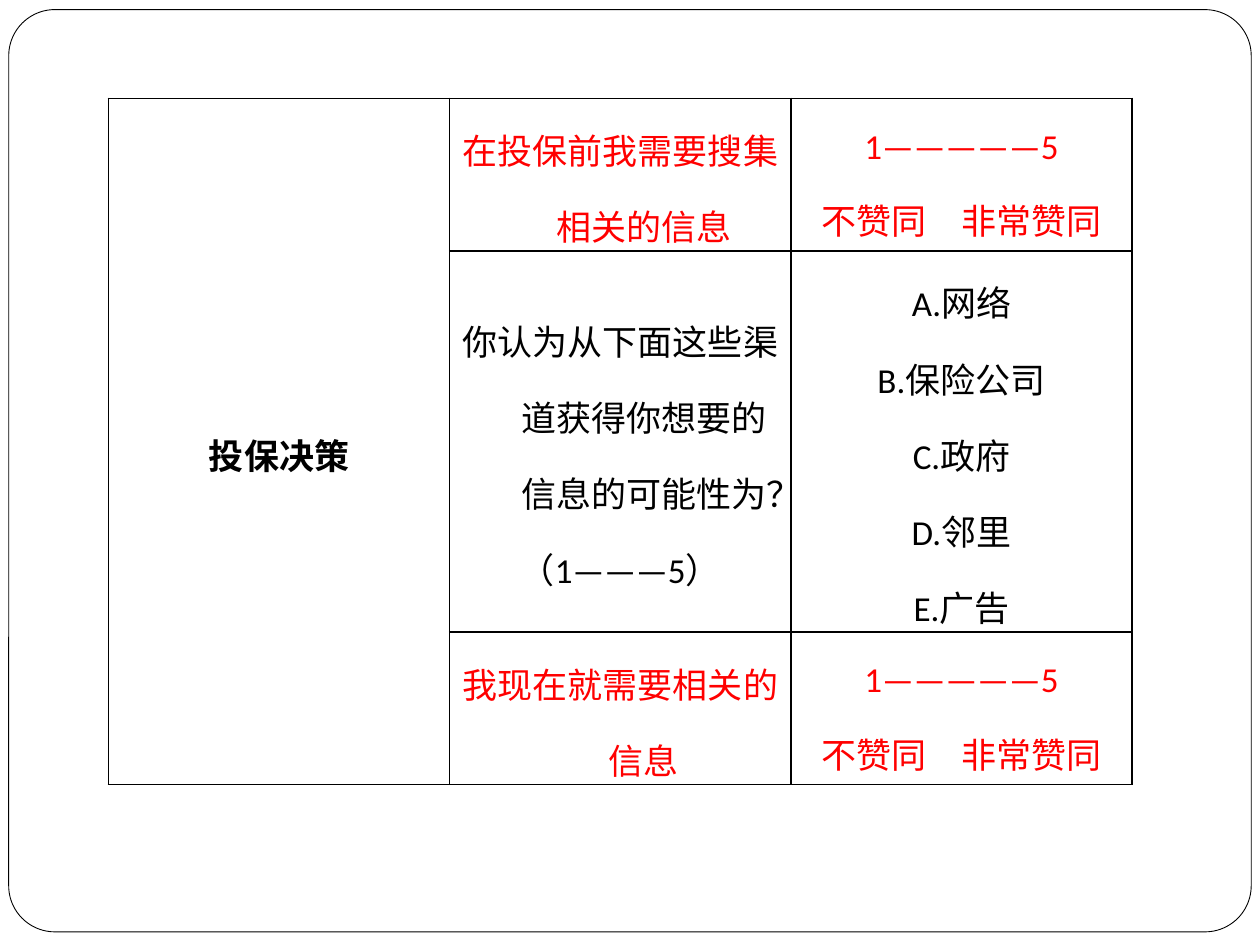
from lxml.etree import SubElement
from pptx import Presentation
from pptx.dml.color import RGBColor
from pptx.enum.shapes import MSO_SHAPE
from pptx.enum.text import MSO_ANCHOR, PP_ALIGN
from pptx.oxml.ns import qn
from pptx.util import Pt

BLACK = RGBColor(0x00, 0x00, 0x00)
WHITE = RGBColor(0xFF, 0xFF, 0xFF)
RED = RGBColor(0xFF, 0x00, 0x00)

FONT = {"name": "Calibri", "size": Pt(20)}
PARAGRAPH = {"alignment": PP_ALIGN.CENTER, "line_spacing": 1.5}
CELL = {
    "vertical_anchor": MSO_ANCHOR.MIDDLE,
    "margin_left": Pt(4.5),
    "margin_right": Pt(4.5),
    "margin_top": Pt(0),
    "margin_bottom": Pt(0),
}
HANGING = Pt(27)
ROW_UNITS = (2, 5, 2)
COLUMN_COUNT = 3

TOPIC = "投保决策"
SCALE = ["1—————5", "不赞同\u3000非常赞同"]
CHANNELS = ["A.网络", "B.保险公司", "C.政府", "D.邻里", "E.广告"]
QUESTIONS = [
    (["在投保前我需要搜集相关的信息"], SCALE, RED),
    (["你认为从下面这些渠道获得你想要的信息的可能性为？", "（1———5）"], CHANNELS, BLACK),
    (["我现在就需要相关的信息"], SCALE, RED),
]


def apply_format(target, values):
    """Set every attribute named in a dict of format values."""
    for name, value in values.items():
        setattr(target, name, value)


def add_frame(page, left, top, width, height):
    """Place the rounded frame around the page."""
    frame = page.shapes.add_shape(MSO_SHAPE.ROUNDED_RECTANGLE, left, top, width, height)
    frame.adjustments[0] = 0.05
    frame.shadow.inherit = False
    frame.fill.solid()
    frame.fill.fore_color.rgb = WHITE
    frame.line.color.rgb = BLACK
    frame.line.width = Pt(0.5)


def add_borders(cell):
    """Draw a thin black line on all four sides of a cell."""
    properties = cell._tc.get_or_add_tcPr()
    for side in ("a:lnL", "a:lnR", "a:lnT", "a:lnB"):
        line = SubElement(properties, qn(side), w=str(Pt(1)))
        fill = SubElement(line, qn("a:solidFill"))
        SubElement(fill, qn("a:srgbClr"), val=str(BLACK))


def fill_cell(cell, lines, color, bold=False, hanging=False):
    """Write centred paragraphs into a cell."""
    apply_format(cell, CELL)
    cell.text = "\n".join(lines)
    for para in cell.text_frame.paragraphs:
        apply_format(para, PARAGRAPH)
        if hanging:
            properties = para._p.get_or_add_pPr()
            properties.set("marL", str(HANGING))
            properties.set("indent", str(-HANGING))
        for span in para.runs:
            apply_format(span.font, FONT)
            span.font.bold = bold
            span.font.color.rgb = color


def add_question_table(page, left, top, width, height):
    """Place the survey table: one topic, its questions and their answers."""
    holder = page.shapes.add_table(len(QUESTIONS), COLUMN_COUNT, left, top, width, height)
    table = holder.table
    apply_format(table, {"first_row": False, "horz_banding": False})
    for column in table.columns:
        column.width = width // COLUMN_COUNT
    for row, units in zip(table.rows, ROW_UNITS):
        row.height = height * units // sum(ROW_UNITS)
    for cell in table.iter_cells():
        add_borders(cell)
        cell.fill.background()
    table.cell(0, 0).merge(table.cell(len(QUESTIONS) - 1, 0))
    fill_cell(table.cell(0, 0), [TOPIC], BLACK, bold=True)
    for index, (question, answers, color) in enumerate(QUESTIONS):
        fill_cell(table.cell(index, 1), question, color, hanging=True)
        fill_cell(table.cell(index, 2), answers, color)


def main():
    """Build the one-page deck and save it."""
    deck = Presentation()
    apply_format(deck, {"slide_width": Pt(720), "slide_height": Pt(540)})
    page = deck.slides.add_slide(deck.slide_layouts[6])
    add_frame(page, Pt(5), Pt(5.5), Pt(710), Pt(527))
    add_question_table(page, Pt(62), Pt(56.2), Pt(585), Pt(366))
    deck.save("out.pptx")


if __name__ == "__main__":
    main()
